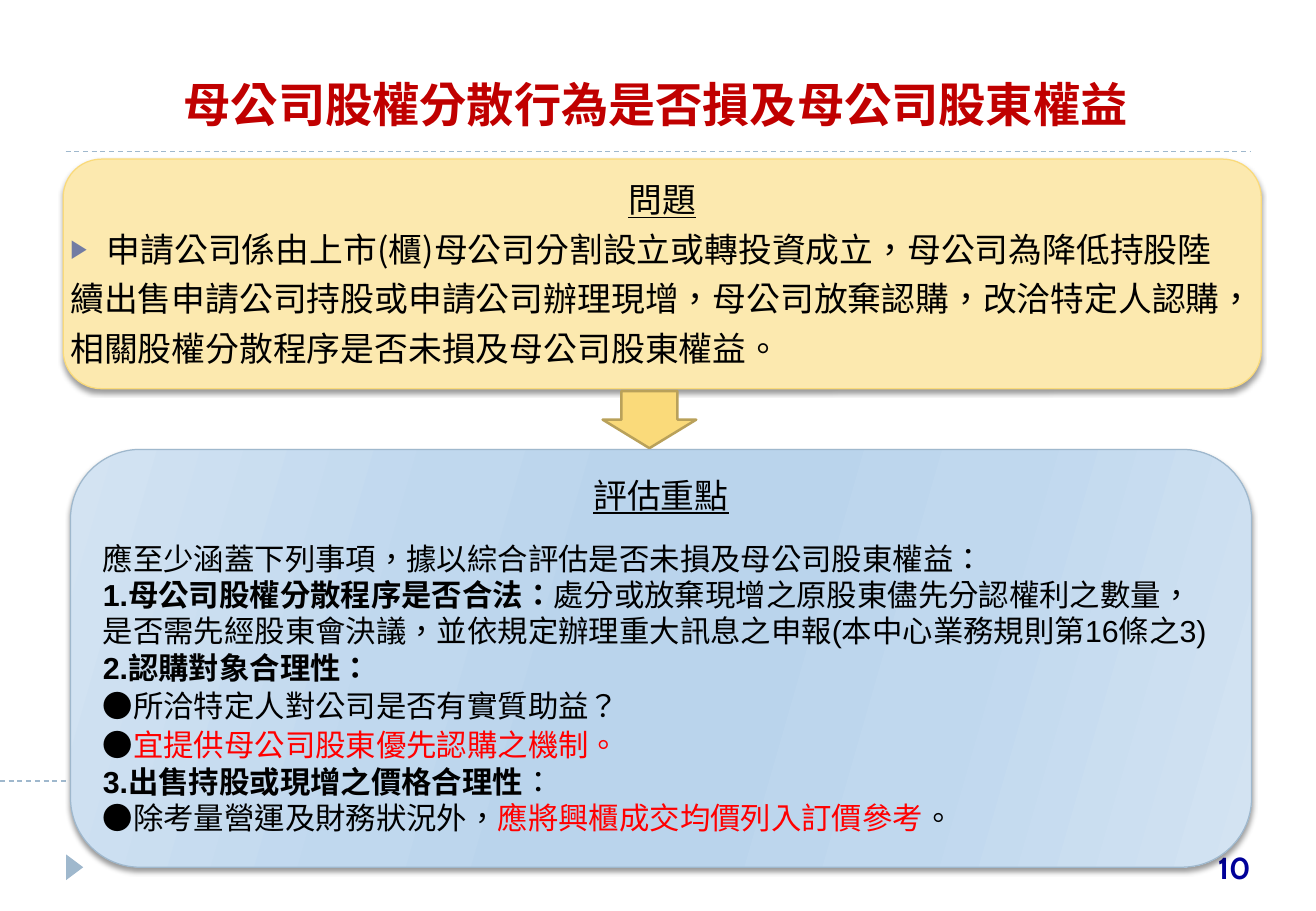
from dataclasses import dataclass
from typing import Optional

from lxml import etree
from pptx import Presentation
from pptx.dml.color import RGBColor
from pptx.enum.dml import MSO_LINE
from pptx.enum.shapes import MSO_CONNECTOR, MSO_SHAPE
from pptx.enum.text import MSO_ANCHOR, MSO_AUTO_SIZE, PP_ALIGN
from pptx.oxml.ns import qn
from pptx.util import Emu, Pt

PX = 9144  # 100 px to the inch
CENTER, LEFT, RIGHT = PP_ALIGN.CENTER, PP_ALIGN.LEFT, PP_ALIGN.RIGHT
MIDDLE, BOTTOM = MSO_ANCHOR.MIDDLE, MSO_ANCHOR.BOTTOM
ROUND_RECT, DOWN_ARROW = MSO_SHAPE.ROUNDED_RECTANGLE, MSO_SHAPE.DOWN_ARROW
TRIANGLE = MSO_SHAPE.ISOSCELES_TRIANGLE
STRAIGHT, DASH = MSO_CONNECTOR.STRAIGHT, MSO_LINE.DASH


@dataclass(frozen=True)
class Theme:
    title: str = "C00000"
    number: str = "000099"
    text: str = "000000"
    alert: str = "FF0000"
    rule: str = "9FB8CD"
    bullet: str = "727CA3"
    question_fill: str = "FCE9AF"
    gold: str = "FADA7A"
    arrow_line: str = "B9A15A"
    review_stops: tuple = ((0, "D3E3F2"), (30, "C0D8EE"), (45, "BAD4EC"),
                           (55, "BAD4EC"), (73, "C0D8EE"), (100, "D3E3F2"))
    title_size: int = 28
    head_size: int = 20
    body_size: int = 18
    title_font: str = "TeX Gyre Bonum"
    number_font: str = "Cabin"
    cjk_font: str = "Noto Sans CJK SC"
    head_font: str = "Times New Roman"
    body_font: str = "Arial"


T = Theme()


@dataclass(frozen=True)
class Box:
    x: int
    y: int
    w: int
    h: int

    def emu(self) -> tuple:
        return tuple(Emu(v * PX) for v in (self.x, self.y, self.w, self.h))


@dataclass(frozen=True)
class Run:
    text: str
    size: int = T.body_size
    font: str = T.body_font
    color: str = T.text
    bold: bool = False
    underline: bool = False


@dataclass(frozen=True)
class Para:
    runs: tuple
    align: PP_ALIGN = LEFT
    line: Optional[float] = None
    before: float = 0
    after: float = 0
    bullet: bool = False


def rgb(color: str) -> RGBColor:
    return RGBColor.from_string(color)


def add_run(p, run: Run) -> None:
    r = p.add_run()
    r.text = run.text
    f = r.font
    f.size, f.name, f.bold, f.underline = Pt(run.size), run.font, run.bold, run.underline
    f.color.rgb = rgb(run.color)
    rPr = r._r.get_or_add_rPr()
    rPr.set("lang", "zh-TW")
    etree.SubElement(rPr, qn("a:ea")).set("typeface", T.cjk_font)


def add_bullet(p) -> None:
    pPr = p._p.get_or_add_pPr()
    pPr.set("marL", str(30 * PX))
    pPr.set("indent", str(-30 * PX))
    color = etree.SubElement(pPr, qn("a:buClr"))
    etree.SubElement(color, qn("a:srgbClr")).set("val", T.bullet)
    etree.SubElement(pPr, qn("a:buSzPct")).set("val", "76000")
    etree.SubElement(pPr, qn("a:buFont")).set("typeface", T.body_font)
    etree.SubElement(pPr, qn("a:buChar")).set("char", "▶")


def write(tf, paras: tuple, anchor: MSO_ANCHOR, wrap: bool) -> None:
    tf.word_wrap, tf.vertical_anchor = wrap, anchor
    tf.auto_size = MSO_AUTO_SIZE.NONE
    for i, para in enumerate(paras):
        p = tf.add_paragraph() if i else tf.paragraphs[0]
        p.alignment = para.align
        p.space_before, p.space_after = Pt(para.before), Pt(para.after)
        if para.line:
            p.line_spacing = Pt(para.line)
        if para.bullet:
            add_bullet(p)
        for run in para.runs:
            add_run(p, run)


def add_shape(s, kind: MSO_SHAPE, box: Box, fill: str,
              line: Optional[str] = None, width: float = 0.75):
    sp = s.shapes.add_shape(kind, *box.emu())
    sp.shadow.inherit = False
    sp.fill.solid()
    sp.fill.fore_color.rgb = rgb(fill)
    if line:
        sp.line.color.rgb = rgb(line)
        sp.line.width = Pt(width)
    else:
        sp.line.fill.background()
    return sp


def add_panel(s, box: Box, fill: str, line: str, paras: tuple):
    """Rounded box with a soft shadow below it and unwrapped text."""
    sp = add_shape(s, ROUND_RECT, box, fill, line)
    effects = sp._element.spPr.find(qn("a:effectLst"))
    shadow = etree.SubElement(effects, qn("a:outerShdw"), blurRad=str(Pt(3)),
                              dist=str(Pt(2)), dir="5400000", rotWithShape="0")
    color = etree.SubElement(shadow, qn("a:srgbClr"), val="000000")
    etree.SubElement(color, qn("a:alpha"), val="40000")
    write(sp.text_frame, paras, MIDDLE, False)
    return sp


def set_gradient(sp, stops: tuple, clockwise: int) -> None:
    sp.fill.gradient()
    sp.fill.gradient_angle = 360 - clockwise
    stop_list = sp._element.spPr.find(qn("a:gradFill")).find(qn("a:gsLst"))
    for old in list(stop_list):
        stop_list.remove(old)
    for pos, color in stops:
        gs = etree.SubElement(stop_list, qn("a:gs"), pos=str(pos * 1000))
        etree.SubElement(gs, qn("a:srgbClr"), val=color)


def add_rule(s, x1: int, x2: int, y: int) -> None:
    c = s.shapes.add_connector(STRAIGHT, *(Emu(v * PX) for v in (x1, y, x2, y)))
    c.line.color.rgb = rgb(T.rule)
    c.line.width, c.line.dash_style = Pt(0.75), DASH
    etree.SubElement(c._element.spPr, qn("a:effectLst"))


def heading(text: str, font: str, line: float, before: float, after: float) -> Para:
    return Para((Run(text, T.head_size, font, underline=True),), CENTER, line, before, after)


def question(text: str, bullet: bool = False) -> Para:
    return Para((Run(text, T.head_size, T.cjk_font),), line=23.5, before=6, bullet=bullet)


def review(*runs: Run, before: float = 0) -> Para:
    return Para(runs, line=21.5, before=before)


QUESTION = (
    heading("問題", T.cjk_font, 23.5, 6, 0),
    question("申請公司係由上市(櫃)母公司分割設立或轉投資成立，母公司為降低持股陸", True),
    question("續出售申請公司持股或申請公司辦理現增，母公司放棄認購，改洽特定人認購，"),
    question("相關股權分散程序是否未損及母公司股東權益。"),
)
REVIEW = (
    heading("評估重點", T.head_font, 20, 0, 15),
    review(Run("應至少涵蓋下列事項，據以綜合評估是否未損及母公司股東權益：")),
    review(Run("1.母公司股權分散程序是否合法：", bold=True),
           Run("處分或放棄現增之原股東儘先分認權利之數量，")),
    review(Run("是否需先經股東會決議，並依規定辦理重大訊息之申報(本中心業務規則第16條之3)")),
    review(Run("2.認購對象合理性：", bold=True)),
    review(Run("●所洽特定人對公司是否有實質助益？"), before=1.5),
    review(Run("●"), Run("宜提供母公司股東優先認購之機制。", color=T.alert), before=1.5),
    review(Run("3.出售持股或現增之價格合理性", bold=True), Run("：")),
    review(Run("●除考量營運及財務狀況外，"),
           Run("應將興櫃成交均價列入訂價參考", color=T.alert), Run("。")),
)


def main() -> None:
    prs = Presentation()
    prs.slide_width, prs.slide_height = Emu(1083 * PX), Emu(750 * PX)
    s = prs.slides.add_slide(prs.slide_layouts[5])

    title = s.shapes.title
    title.left, title.top, title.width, title.height = Box(52, 36, 975, 75).emu()
    title.text_frame.margin_bottom = Emu(2 * PX)
    title_run = Run("母公司股權分散行為是否損及母公司股東權益", T.title_size,
                    T.title_font, T.title, bold=True)
    write(title.text_frame, (Para((title_run,), CENTER),), BOTTOM, True)

    add_rule(s, 0, 70, 643)
    add_rule(s, 54, 1029, 125)
    add_shape(s, TRIANGLE, Box(51, 707, 21, 14), T.rule).rotation = 90

    number = s.shapes.add_textbox(*Box(895, 694, 144, 40).emu())
    number_run = Run("10", T.body_size, T.number_font, T.number, bold=True)
    write(number.text_frame, (Para((number_run,), RIGHT),), MIDDLE, True)

    add_panel(s, Box(52, 131, 986, 189), T.question_fill, T.gold, QUESTION)
    arrow = add_shape(s, DOWN_ARROW, Box(496, 322, 77, 47), T.gold, T.arrow_line, 1.5)
    arrow.adjustments[0] = 0.6
    panel = add_panel(s, Box(58, 370, 972, 344), T.review_stops[0][1], T.rule, REVIEW)
    set_gradient(panel, T.review_stops, 16)
    prs.save("out.pptx")


if __name__ == "__main__":
    main()
